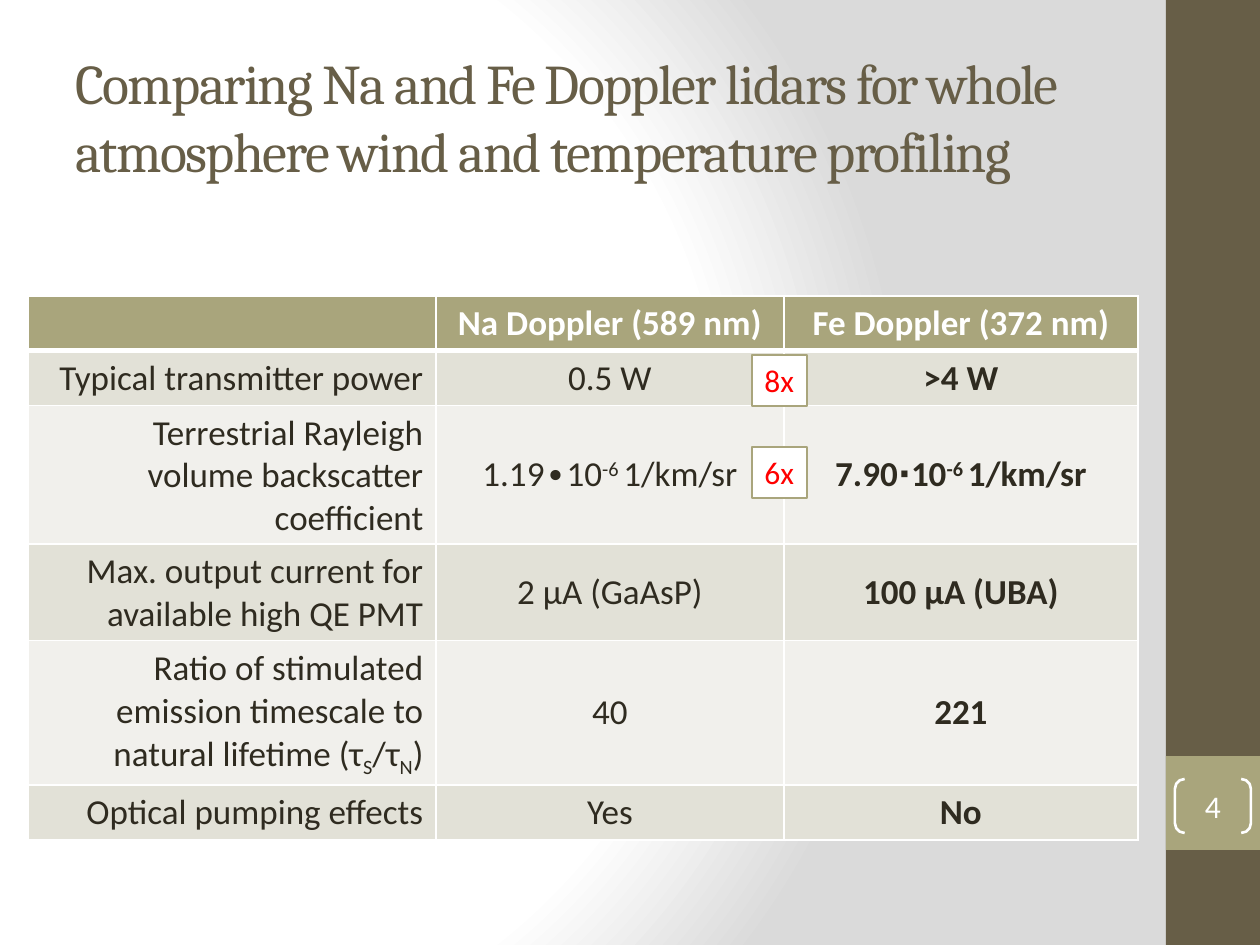
from pptx import Presentation, util as u
from pptx.dml.color import RGBColor
from pptx.enum import shapes, text
from pptx.oxml import parse_xml
from pptx.oxml.ns import nsdecls

PX = u.Inches(1) // 126
BROWN = RGBColor(0x67, 0x5E, 0x47)
OLIVE = RGBColor(0xA9, 0xA5, 0x7C)
DARK = RGBColor(0x2F, 0x2B, 0x20)
WHITE = RGBColor(0xFF, 0xFF, 0xFF)
RED = RGBColor(0xFF, 0x00, 0x00)
BANDS = [RGBColor(0xF1, 0xF0, 0xEC), RGBColor(0xE2, 0xE1, 0xD7)]
LEFT, MID, RIGHT = text.PP_ALIGN.LEFT, text.PP_ALIGN.CENTER, text.PP_ALIGN.RIGHT
TOP, CENTER = text.MSO_ANCHOR.TOP, text.MSO_ANCHOR.MIDDLE


def write(frame, words, size=20, color=DARK, font="Calibri", bold=False,
          align=LEFT, shift=0, track=0):
    para = frame.paragraphs[0]
    para.alignment = align
    for i, part in enumerate(words.split("|")):
        run = para.add_run()
        run.text = part
        run.font.size = u.Pt(size)
        run.font.name = font
        run.font.bold = bold
        run.font.color.rgb = color
        if i % 2:
            run.font._element.set("baseline", str(shift * 1000))
        if track:
            run.font._element.set("spc", str(track * 100))


def block(kind, x, y, w, h, fill=None, line=None, width=1):
    shape = slide.shapes.add_shape(kind, x * PX, y * PX, w * PX, h * PX)
    shape.shadow.inherit = False
    if fill is None:
        shape.fill.background()
    else:
        shape.fill.solid()
        shape.fill.fore_color.rgb = fill
    if line is None:
        shape.line.fill.background()
    else:
        shape.line.color.rgb = line
        shape.line.width = u.Pt(width)
    return shape


deck = Presentation()
deck.slide_width, deck.slide_height = 1260 * PX, 945 * PX
slide = deck.slides.add_slide(deck.slide_layouts[6])
stops = "".join(f'<a:gs pos="{pos}000"><a:srgbClr val="{tone}"/></a:gs>'
                for pos, tone in [(0, "FFFFFF"), (75, "FFFFFF"), (100, "DADADA")])
slide.element.cSld.insert(0, parse_xml(
    f'<p:bg {nsdecls("p", "a")}><p:bgPr><a:gradFill rotWithShape="1">'
    f'<a:gsLst>{stops}</a:gsLst><a:path path="circle">'
    '<a:fillToRect l="20000" t="50000" r="100000" b="50000"/></a:path>'
    '</a:gradFill><a:effectLst/></p:bgPr></p:bg>'))

RECT = shapes.MSO_SHAPE.RECTANGLE
block(RECT, 1166, 0, 94, 945, BROWN)
block(RECT, 1166, 756, 94, 94, OLIVE)

title = slide.shapes.add_textbox(63 * PX, 4 * PX, 1050 * PX, 224 * PX).text_frame
title.word_wrap = True
title.vertical_anchor = CENTER
write(title, "Comparing Na and Fe Doppler lidars for whole atmosphere wind "
      "and temperature profiling", size=32, color=BROWN, font="Cambria", track=-1)

page = block(shapes.MSO_SHAPE.DOUBLE_BRACKET, 1175, 779, 76, 54, line=WHITE, width=1.5)
page.adjustments[0] = 0.18
frame = page.text_frame
frame.margin_left = frame.margin_right = frame.margin_top = frame.margin_bottom = 0
frame.vertical_anchor = CENTER
write(frame, "4", size=18, color=WHITE, align=MID)

ROWS = [
    ("", "Na Doppler (589 nm)", "Fe Doppler (372 nm)"),
    ("Typical transmitter power", "0.5 W", ">4 W"),
    ("Terrestrial Rayleigh volume backscatter coefficient",
     "1.19∙10|-6 |1/km/sr", "7.90∙10|-6 |1/km/sr"),
    ("Max. output current for available high QE PMT", "2 μA (GaAsP)", "100 μA (UBA)"),
    ("Ratio of stimulated emission timescale to natural lifetime (τ|S|/τ|N|)",
     "40", "221"),
    ("Optical pumping effects", "Yes", "No"),
]
holder = slide.shapes.add_table(len(ROWS), 3, 28 * PX, 296 * PX, 1110 * PX, 538 * PX)
table = holder.table
table.horz_banding = False
for col, wide in zip(table.columns, (408, 348, 354)):
    col.width = wide * PX
for r, row in enumerate(ROWS):
    table.rows[r].height = 52 * PX
    for c, words in enumerate(row):
        cell = table.cell(r, c)
        head, label = r == 0, c == 0
        cell.vertical_anchor = TOP if head or label else CENTER
        write(cell.text_frame, words, color=WHITE if head else DARK,
              bold=head or c == 2, align=RIGHT if label else MID,
              shift=-25 if label else 30)
        props = cell._tc.get_or_add_tcPr()
        for side in "LRTB":
            thick = 3 if (head and side == "B") or (r == 1 and side == "T") else 1
            props.append(parse_xml(
                f'<a:ln{side} {nsdecls("a")} w="{u.Pt(thick)}"><a:solidFill>'
                f'<a:srgbClr val="{WHITE}"/></a:solidFill></a:ln{side}>'))
        cell.fill.solid()
        cell.fill.fore_color.rgb = OLIVE if head else BANDS[r % 2]
holder.height = 538 * PX

for y, words in [(447, "6x"), (355, "8x")]:
    tag = block(RECT, 752, y, 55, 51, WHITE, OLIVE, 0.75)
    frame = tag.text_frame
    frame.word_wrap = False
    frame.auto_size = text.MSO_AUTO_SIZE.SHAPE_TO_FIT_TEXT
    frame.vertical_anchor = TOP
    write(frame, words, size=18, color=RED)

deck.save("out.pptx")
